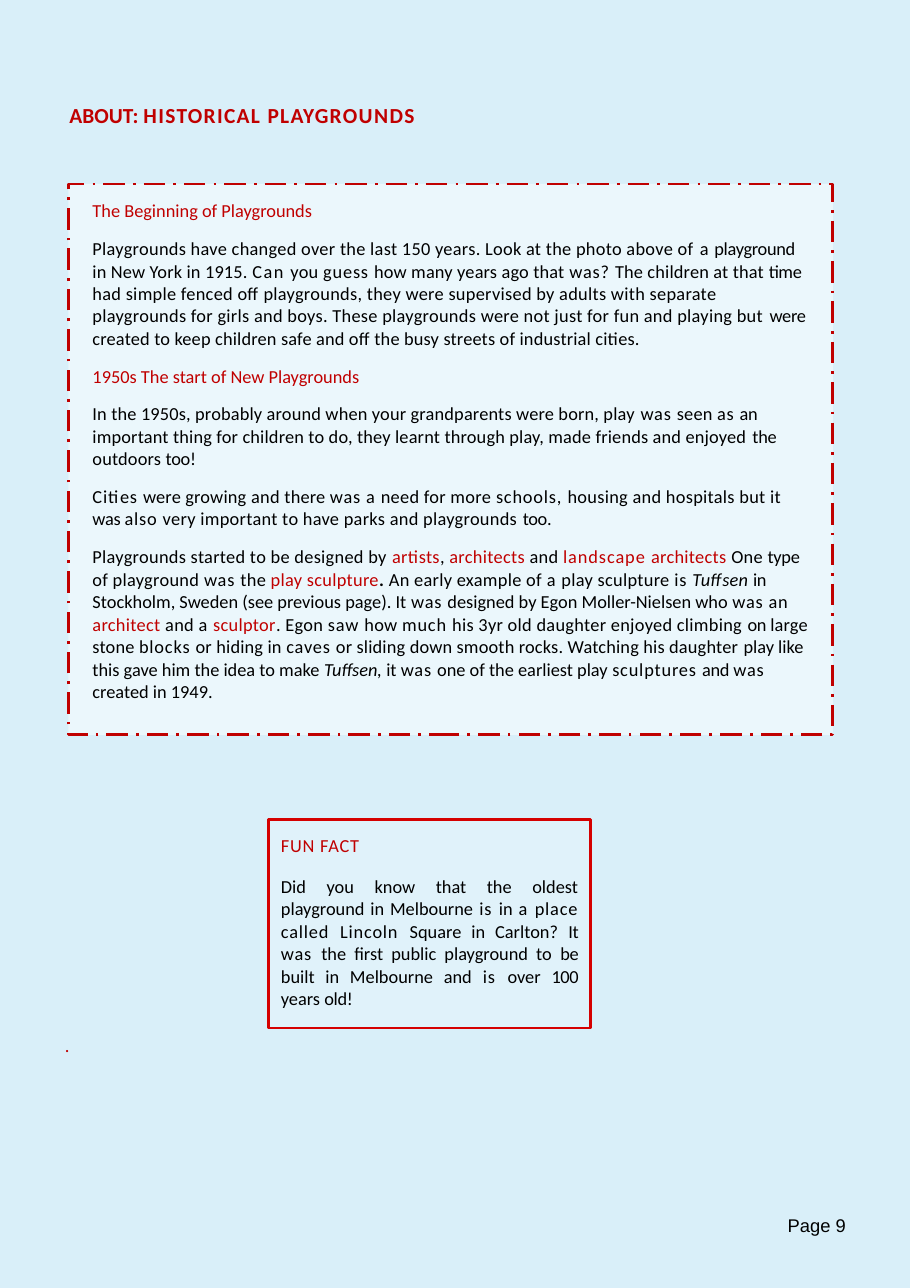
import pptx
import pptx.dml.color
import pptx.enum.dml
import pptx.enum.shapes
import pptx.enum.text
import pptx.oxml.ns
import pptx.util
from lxml import etree

Inches = pptx.util.Inches
Pt = pptx.util.Pt
RGBColor = pptx.dml.color.RGBColor
Align = pptx.enum.text.PP_ALIGN

SKY = RGBColor(0xD9, 0xEF, 0xF9)
PALE = RGBColor(0xEB, 0xF7, 0xFC)
CRIMSON = RGBColor(0xC0, 0x00, 0x00)
BRIGHT_RED = RGBColor(0xD5, 0x00, 0x00)
BLACK = RGBColor(0x00, 0x00, 0x00)


def span(text, **style):
    """Pair a stretch of text with its format: spacing, color, size, font, bold, italic."""
    return text, style


def loose(text):
    return span(text, spacing=0.55)


def tight(text):
    return span(text, spacing=-0.2)


def red(text, spacing=0.2):
    return span(text, color=CRIMSON, spacing=spacing)


def paragraph(*spans, before=0, line=1.02, align=Align.LEFT, **style):
    return {"spans": spans, "before": before, "line": line, "align": align, "style": style}


def heading(text, before=0, **style):
    return paragraph(text, before=before, line=1.0, color=CRIMSON, **style)


class PageBuilder:
    def __init__(self, page, font="Calibri", size=12):
        self.page = page
        self.font = font
        self.size = size

    def background(self, color):
        self.page.background.fill.solid()
        self.page.background.fill.fore_color.rgb = color

    def panel(self, left, top, width, height, line, dash=None, opacity=100):
        box = self.page.shapes.add_shape(
            pptx.enum.shapes.MSO_SHAPE.RECTANGLE,
            Inches(left), Inches(top), Inches(width), Inches(height))
        box.shadow.inherit = False
        box.fill.solid()
        box.fill.fore_color.rgb = PALE
        if opacity < 100:
            color = box.element.spPr.find(".//" + pptx.oxml.ns.qn("a:srgbClr"))
            etree.SubElement(color, pptx.oxml.ns.qn("a:alpha"), val=str(opacity * 1000))
        box.line.color.rgb = line
        box.line.width = Pt(1.75)
        if dash:
            box.line.dash_style = dash
        return box

    def text(self, left, top, width, height, paragraphs, insets=(0.01, 0.01, 0, 0)):
        box = self.page.shapes.add_textbox(
            Inches(left), Inches(top), Inches(width), Inches(height))
        self.set_text(box, paragraphs, insets)

    def set_text(self, box, paragraphs, insets):
        """Fill a box; insets run left, top, right, bottom."""
        frame = box.text_frame
        frame.word_wrap = True
        frame.vertical_anchor = pptx.enum.text.MSO_ANCHOR.TOP
        frame.margin_left, frame.margin_top, frame.margin_right, frame.margin_bottom = map(
            Inches, insets)
        for index, content in enumerate(paragraphs):
            para = frame.add_paragraph() if index else frame.paragraphs[0]
            para.alignment = content["align"]
            para.space_before = Pt(content["before"])
            para.line_spacing = content["line"]
            for item in content["spans"]:
                words, style = span(item) if isinstance(item, str) else item
                self.add_run(para, words, **{**content["style"], **style})

    def add_run(self, para, words, color=BLACK, spacing=0, size=None, font=None,
                bold=False, italic=False):
        run = para.add_run()
        run.text = words
        run.font.name = font or self.font
        run.font.size = Pt(size or self.size)
        run.font.bold = bold
        run.font.italic = italic
        run.font.color.rgb = color
        if spacing:
            run._r.get_or_add_rPr().set("spc", str(round(spacing * 100)))


HISTORY = [
    heading("The Beginning of Playgrounds"),
    paragraph(
        "Playgrounds have changed over the last 150 years. Look at the photo above of ",
        loose("a "), tight("playground "), span("in New York in 1915. ", spacing=0.1),
        span("Can ", spacing=0.9), "you ", loose("guess "),
        span("how many years ago that ", spacing=0.1), loose("was? "),
        span("The children at that ", spacing=0.1), tight("time "),
        "had simple fenced off playgrounds, they were supervised by adults with separate "
        "playgrounds for girls and boys. These playgrounds were not just for fun and "
        "playing but ", tight("were "),
        span("created to keep children safe and off the busy streets of industrial cities.",
             spacing=0.1),
        before=10, spacing=0.2),
    heading("1950s The start of New Playgrounds", before=10.2),
    paragraph(
        "In the 1950s, probably around when your grandparents were born, play ",
        loose("was "), "seen ", loose("as "), tight("an "),
        "important thing for children to do, they learnt through play, made friends and "
        "enjoyed ", tight("the "), "outdoors ", tight("too!"),
        before=9.9, spacing=0.1),
    paragraph(
        loose("Cities "), span("were growing ", spacing=0.1), "and ",
        span("there ", spacing=0.1), loose("was a "), "need for more ",
        loose("schools, "), "housing and hospitals but it ", tight("was "),
        loose("also "), "very important to have parks and playgrounds ", tight("too."),
        before=10.1, spacing=0.2),
    paragraph(
        "Playgrounds started to be designed by ", red("artists"), ", ",
        red("architects "), "and ", red("landscape ", 0.6), red("architects "),
        "One ", tight("type "), "of playground ", loose("was "), "the ",
        red("play sculpture"), span(". ", bold=True), "An early example of ",
        loose("a "), "play sculpture ", loose("is "), span("Tuffsen ", italic=True),
        tight("in "),
        span("Stockholm, Sweden (see previous page). It ", spacing=0), loose("was "),
        span("designed by Egon Moller-Nielsen who ", spacing=0), loose("was an "),
        red("architect "), "and ", loose("a "), red("sculptor"), ". Egon ",
        loose("saw "), "how ", loose("much "),
        "his 3yr old daughter enjoyed climbing ", tight("on "),
        span("large stone ", spacing=0.1), loose("blocks "),
        span("or hiding in ", spacing=0.1), loose("caves "),
        span("or sliding down smooth rocks. Watching his daughter ", spacing=0.1),
        span("play like this gave him the idea to make ", spacing=0),
        span("Tuffsen, ", italic=True, spacing=0), span("it ", spacing=0),
        loose("was "), span("one of the earliest play ", spacing=0),
        loose("sculptures "), tight("and "), loose("was "),
        span("created in 1949.", spacing=0),
        before=10, spacing=0.2),
]

FUN_FACT = [
    heading("FUN FACT", spacing=0.5),
    paragraph(
        "Did you know that the oldest playground in Melbourne ", loose("is "), "in ",
        loose("a place called Lincoln "), "Square in Carlton? ", tight("It "),
        loose("was "), "the first public playground to ", tight("be "),
        "built in Melbourne and ", loose("is "), "over ", tight("100 "),
        "years ", tight("old!"),
        before=12.2, align=Align.JUSTIFY),
]


def main():
    deck = pptx.Presentation()
    deck.slide_width = Inches(8.26)
    deck.slide_height = Inches(11.69)
    builder = PageBuilder(deck.slides.add_slide(deck.slide_layouts[6]))

    builder.background(SKY)
    builder.text(0.62, 0.92, 3.4, 0.26, [
        paragraph("ABOUT: ", span("HISTORICAL PLAYGROUNDS", spacing=0.85),
                  line=1.0, color=CRIMSON, size=14, bold=True)])
    builder.text(0.58, 9.38, 0.08, 0.23, [heading(".")])

    fact_box = builder.panel(2.44, 7.44, 2.92, 1.89, BRIGHT_RED, opacity=41)
    builder.set_text(fact_box, FUN_FACT, (0.11, 0.13, 0.11, 0))

    builder.panel(0.62, 1.67, 6.94, 5, CRIMSON,
                  dash=pptx.enum.dml.MSO_LINE.LONG_DASH_DOT)
    builder.text(0.83, 1.79, 6.64, 4.58, HISTORY, (0.01, 0.02, 0.13, 0))

    builder.text(6.55, 11.02, 1.28, 0.21, [
        paragraph("Page 9", line=Pt(14.2), font="Arial")], (0.6, 0, 0, 0))
    deck.save("out.pptx")


if __name__ == "__main__":
    main()
